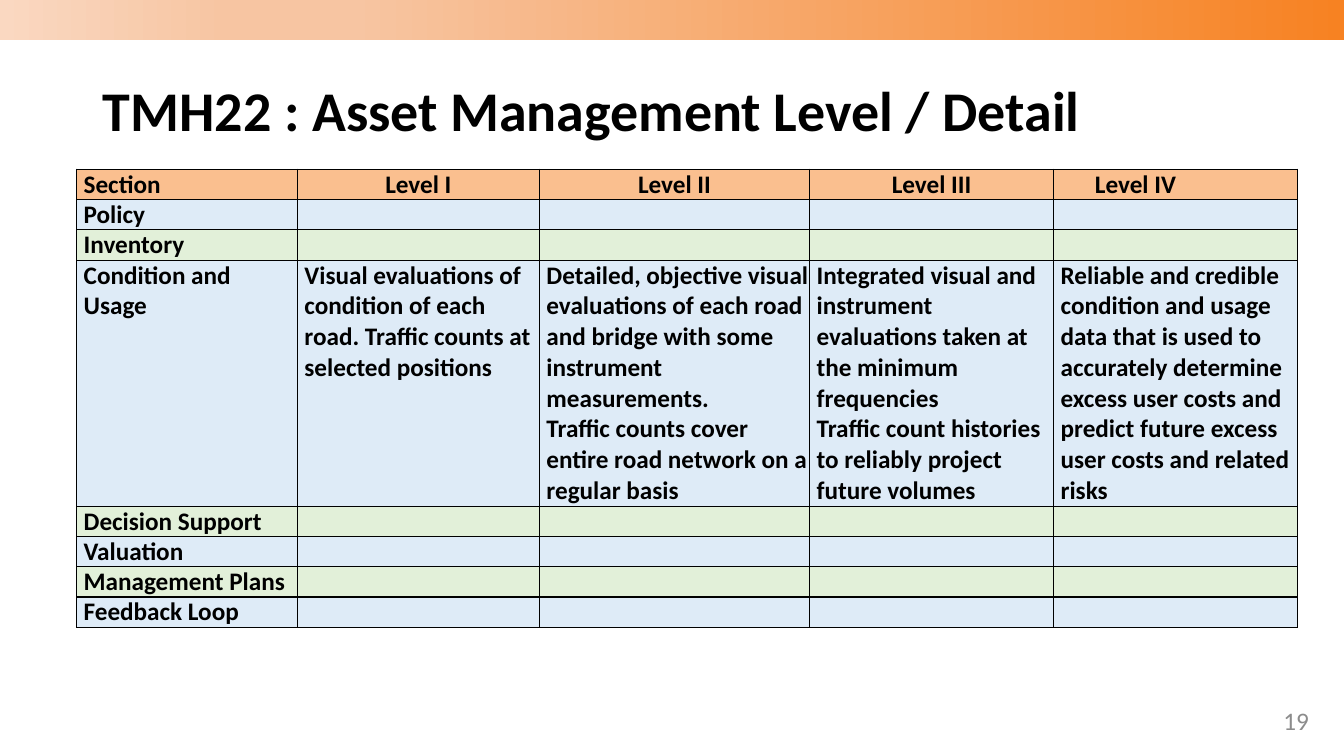
from lxml import etree
from pptx import Presentation
from pptx.dml.color import RGBColor
from pptx.enum.shapes import MSO_SHAPE
from pptx.enum.text import MSO_ANCHOR, MSO_AUTO_SIZE, PP_ALIGN
from pptx.oxml.ns import qn
from pptx.util import Inches, Pt

RECT = MSO_SHAPE.RECTANGLE
MIDDLE = MSO_ANCHOR.MIDDLE
NO_FIT = MSO_AUTO_SIZE.NONE
LEFT, CENTER, RIGHT = PP_ALIGN.LEFT, PP_ALIGN.CENTER, PP_ALIGN.RIGHT

BLACK, GREY = "000000", "8C8C8C"
ORANGE, BLUE, GREEN = "FABF8F", "DEEBF7", "E2F0D9"
BAND = [(0, "F78222"), (74, "F7C5A2"), (83, "F7C5A2"), (100, "FAD8C1")]

COLS = [2.19, 2.4, 2.68, 2.42, 2.42]
HEADS = [
    ("Section", LEFT, 0.07),
    ("Level I", CENTER, 0.4),
    ("Level II", CENTER, 0.42),
    ("Level III", CENTER, 0.4),
    ("Level IV", LEFT, 0.41),
]
DETAIL = [
    "Visual evaluations of condition of each road. "
    "Traffic counts at selected positions",
    "Detailed, objective visual evaluations of each road and bridge "
    "with some instrument measurements.\n"
    "Traffic counts cover entire road network on a regular basis",
    "Integrated visual and instrument evaluations taken at the "
    "minimum frequencies\n"
    "Traffic count histories to reliably project future volumes",
    "Reliable and credible condition and usage data that is used to "
    "accurately determine excess user costs and predict future excess "
    "user costs and related risks",
]
BLANK = [""] * 4
ROWS = [
    ["Policy"] + BLANK,
    ["Inventory"] + BLANK,
    ["Condition and Usage"] + DETAIL,
    ["Decision Support"] + BLANK,
    ["Valuation"] + BLANK,
    ["Management Plans"] + BLANK,
    ["Feedback Loop"] + BLANK,
]


def color(text):
    return RGBColor.from_string(text)


def box(left, top, width, height):
    return [Inches(n) for n in (left, top, width, height)]


class Page:
    """Holds the slide and its text style."""

    def __init__(self, deck, face="Calibri"):
        self.face = face
        self.slide = deck.slides.add_slide(deck.slide_layouts[5])
        self.shapes = self.slide.shapes

    def style(self, para, size, tint=BLACK, bold=False, align=LEFT):
        para.alignment = align
        font = para.font
        font.name, font.size, font.bold = self.face, Pt(size), bold
        font.color.rgb = color(tint)

    def band(self, place, stops):
        bar = self.shapes.add_shape(RECT, *box(*place))
        bar.shadow.inherit = False
        bar.line.fill.background()
        bar.fill.gradient()
        bar.fill.gradient_angle = 180
        gs_list = next(bar._element.spPr.iter(qn("a:gsLst")))
        for old in list(gs_list):
            gs_list.remove(old)
        for pos, tint in stops:
            stop = etree.SubElement(gs_list, qn("a:gs"), pos=str(pos * 1000))
            etree.SubElement(stop, qn("a:srgbClr"), val=tint)

    def title(self, place, text):
        head = self.shapes.title
        head.left, head.top, head.width, head.height = box(*place)
        frame = head.text_frame
        frame.text = text
        frame.vertical_anchor, frame.auto_size = MIDDLE, NO_FIT
        para = frame.paragraphs[0]
        para.line_spacing = 0.9
        self.style(para, 40, bold=True)

    def number(self, place, text):
        frame = self.shapes.add_textbox(*box(*place)).text_frame
        frame.word_wrap, frame.vertical_anchor = True, MIDDLE
        frame.text = text
        self.style(frame.paragraphs[0], 18, GREY, align=RIGHT)

    def cell(self, cell, text, fill, align=LEFT, indent=0.07):
        cell.margin_left = cell.margin_right = 0
        cell.margin_top = cell.margin_bottom = 0
        cell.fill.solid()
        cell.fill.fore_color.rgb = color(fill)
        self.border(cell)
        cell.text = text
        for para in cell.text_frame.paragraphs:
            props = para._p.get_or_add_pPr()
            props.set("marL", str(Inches(indent)))
            if align == CENTER:
                props.set("marR", str(Inches(indent)))
            self.style(para, 18, bold=True, align=align)

    def border(self, cell):
        props = cell._tc.get_or_add_tcPr()
        for at, side in enumerate("LRTB"):
            line = etree.Element(qn("a:ln" + side), w=str(Pt(1)))
            solid = etree.SubElement(line, qn("a:solidFill"))
            etree.SubElement(solid, qn("a:srgbClr"), val=BLACK)
            props.insert(at, line)

    def table(self, place, cols, heads, rows):
        grid = self.shapes.add_table(
            len(rows) + 1, len(cols), *box(*place)).table
        grid.first_row = grid.horz_banding = False
        for col, width in zip(grid.columns, cols):
            col.width = Inches(width)
        for row in grid.rows:
            row.height = Inches(0.3)
        for c, (text, align, indent) in enumerate(heads):
            self.cell(grid.cell(0, c), text, ORANGE, align, indent)
        for r, row in enumerate(rows, 1):
            if all(row):
                grid.rows[r].height = Inches(2.44)
            for c, text in enumerate(row):
                self.cell(grid.cell(r, c), text, BLUE if r % 2 else GREEN)


def main():
    deck = Presentation()
    deck.slide_width, deck.slide_height = Inches(13.33), Inches(7.5)
    page = Page(deck)
    page.band((0, 0, 13.33, 0.4), BAND)
    page.title((0.92, 0.4, 11.5, 1.45), "TMH22 : Asset Management Level / Detail")
    page.number((9.42, 6.95, 3.66, 0.4), "19")
    page.table((0.76, 1.68, 12.11, 4.5), COLS, HEADS, ROWS)
    deck.save("out.pptx")


if __name__ == "__main__":
    main()
